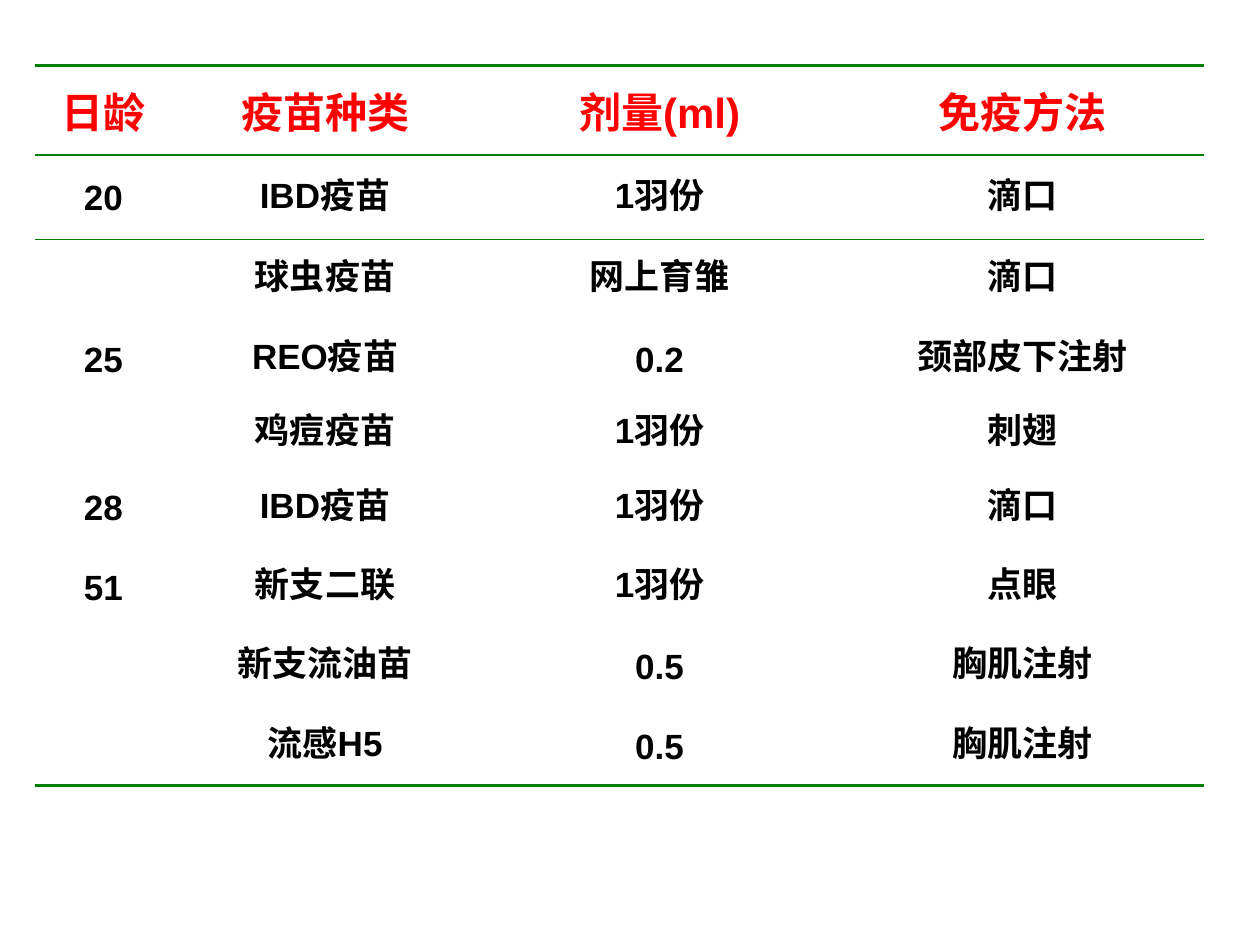
from lxml import etree
from pptx import Presentation
from pptx import util as u
from pptx.dml.color import RGBColor
from pptx.enum import text
from pptx.oxml import ns

Pt = u.Pt
RED = RGBColor(0xFF, 0, 0)
BLACK = RGBColor(0, 0, 0)
GREEN = RGBColor(0, 0x7F, 0)
PLAIN = "{2D5ABB26-0587-4C30-8999-92F81FD0307C}"

ROWS = [
    ("日龄", "疫苗种类", "剂量(ml)", "免疫方法"),
    ("20", "IBD疫苗", "1羽份", "滴口"),
    ("", "球虫疫苗", "网上育雏", "滴口"),
    ("25", "REO疫苗", "0.2", "颈部皮下注射"),
    ("", "鸡痘疫苗", "1羽份", "刺翅"),
    ("28", "IBD疫苗", "1羽份", "滴口"),
    ("51", "新支二联", "1羽份", "点眼"),
    ("", "新支流油苗", "0.5", "胸肌注射"),
    ("", "流感H5", "0.5", "胸肌注射"),
]
WIDTHS = [78.5, 174.9, 207.4, 207.4]
HEIGHTS = [51.1, 48.2, 45.4, 45.4, 39.6] + [45.4] * 4
LAST = len(ROWS) - 1
RULES = {0: {"lnT": 2, "lnB": 1}, 1: {"lnT": 1}, LAST: {"lnB": 2}}


def rule(cell, side, width):
    props = cell._tc.get_or_add_tcPr()
    line = etree.SubElement(props, ns.qn("a:" + side), w=str(Pt(width)))
    fill = etree.SubElement(line, ns.qn("a:solidFill"))
    etree.SubElement(fill, ns.qn("a:srgbClr"), val=str(GREEN))


deck = Presentation()
deck.slide_width, deck.slide_height = Pt(720), Pt(540)
slide = deck.slides.add_slide(deck.slide_layouts[6])
frame = slide.shapes.add_table(
    len(ROWS), len(WIDTHS), Pt(19.8), Pt(37.5), Pt(sum(WIDTHS)), Pt(sum(HEIGHTS)))
table = frame.table
table.first_row = table.horz_banding = False
table._tbl.tblPr.find(ns.qn("a:tableStyleId")).text = PLAIN

for col, width in zip(table.columns, WIDTHS):
    col.width = Pt(width)

for r, (row, height) in enumerate(zip(ROWS, HEIGHTS)):
    table.rows[r].height = Pt(height)
    for c, words in enumerate(row):
        cell = table.cell(r, c)
        cell.margin_left = cell.margin_right = Pt(7.2)
        cell.margin_top = cell.margin_bottom = Pt(4.3)
        cell.vertical_anchor = text.MSO_ANCHOR.MIDDLE
        for side, width in RULES.get(r, {}).items():
            rule(cell, side, width)
        cell.fill.background()
        if not words:
            continue
        cell.text = words
        para = cell.text_frame.paragraphs[0]
        para.alignment = text.PP_ALIGN.CENTER
        props = para._p.get_or_add_pPr()
        props.set("marL", str(Pt(27)))
        props.set("indent", str(Pt(-27)))
        if r:
            para.line_spacing = Pt(24)
        font = para.font
        font.name = "Arial"
        font.bold = True
        font.size = Pt(20 if r else 24)
        font.color.rgb = BLACK if r else RED

deck.save("out.pptx")
